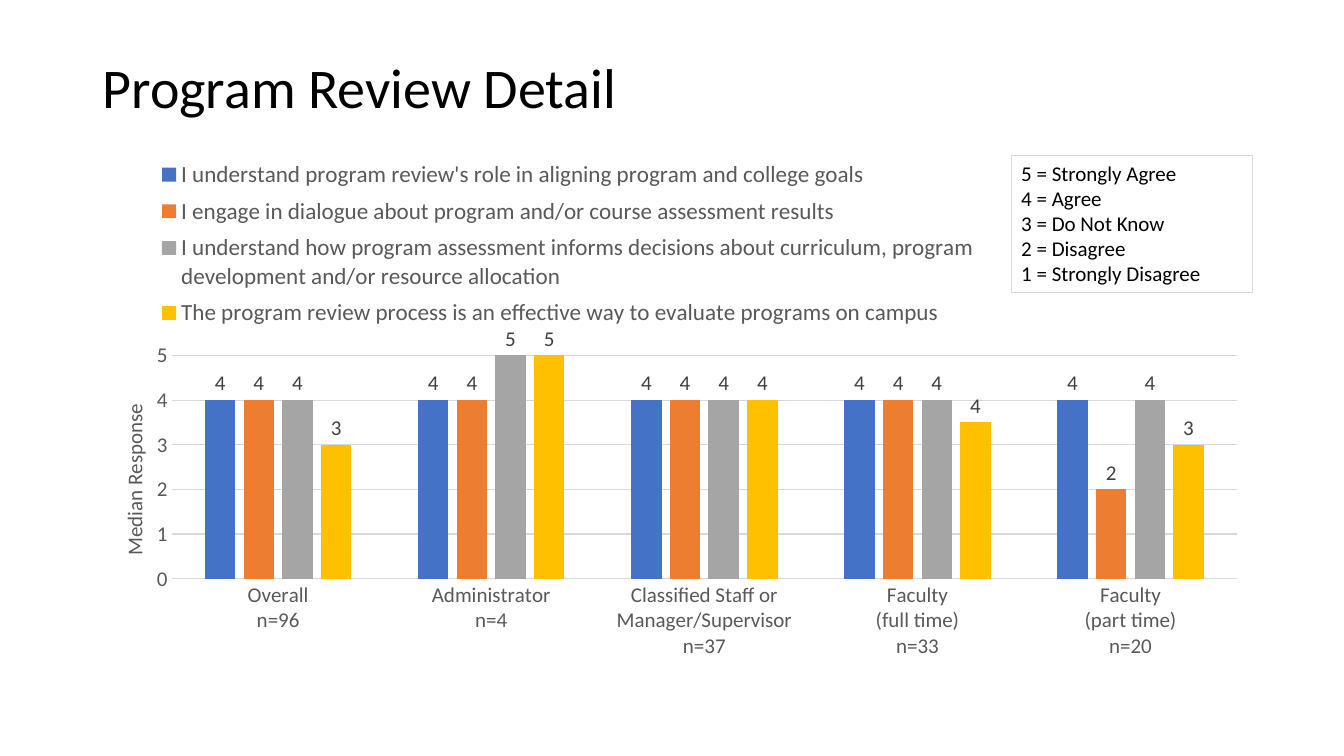
import pptx
import pptx.chart.data
import pptx.dml.color
import pptx.enum.chart
import pptx.enum.shapes
import pptx.enum.text
import pptx.oxml
import pptx.oxml.ns
import pptx.util

Inches, Pt = pptx.util.Inches, pptx.util.Pt

HEADING = "Program Review Detail"
AXIS_TITLE = "Median Response"
GROUPS = [
    "Overall\nn=96",
    "Administrator\nn=4",
    "Classified Staff or\nManager/Supervisor\nn=37",
    "Faculty\n(full time)\nn=33",
    "Faculty\n(part time)\nn=20",
]
STATEMENTS = [
    ("I understand program review's role in aligning program and college goals",
     (4, 4, 4, 4, 4), "blue"),
    ("I engage in dialogue about program and/or course assessment results",
     (4, 4, 4, 4, 2), "orange"),
    ("I understand how program assessment informs decisions about curriculum, "
     "program development and/or resource allocation",
     (4, 5, 4, 4, 4), "gray"),
    ("The program review process is an effective way to evaluate programs on campus",
     (3, 5, 4, 3.5, 3), "gold"),
]
SCALE = ["5 = Strongly Agree", "4 = Agree", "3 = Do Not Know",
         "2 = Disagree", "1 = Strongly Disagree"]

COLORS = {
    "blue": "4472C4", "orange": "ED7D31", "gray": "A5A5A5", "gold": "FFC000",
    "black": "000000", "axis": "595959", "label": "404040", "rule": "D9D9D9",
}
HEADING_AT = (0.92, 0.4, 11.5, 1)
CHART_AT = (0.92, 1.4, 11.5, 5.51)
SCALE_AT = (10.03, 1.54, 2.39, 1.36)

# Fractions of the chart frame: x, y and, where needed, w, h
CHART_LAYOUT = {
    "c:chart/c:plotArea": (0, {"x": 0.068, "y": 0.386, "w": 0.919, "h": 0.402}),
    "c:chart/c:legend": (1, {"x": 0.05, "y": 0.02, "w": 0.72, "h": 0.33}),
    "c:chart/c:plotArea/c:valAx/c:title": (1, {"x": 0.02, "y": 0.466}),
}


def rgb(name):
    return pptx.dml.color.RGBColor.from_string(COLORS[name])


def style_font(font, size, color):
    for attribute, value in {"name": "Calibri", "size": Pt(size), "bold": False}.items():
        setattr(font, attribute, value)
    font.color.rgb = rgb(color)


def style_line(line):
    line.color.rgb = rgb("rule")
    line.width = Pt(0.75)


def write_lines(frame, lines, size):
    frame.word_wrap = True
    for index, line in enumerate(lines):
        paragraph = frame.paragraphs[0] if index == 0 else frame.add_paragraph()
        paragraph.alignment = pptx.enum.text.PP_ALIGN.LEFT
        run = paragraph.add_run()
        run.text = line
        style_font(run.font, size, "black")


def place_in_chart(part, index, fractions):
    """Give a chart part a fixed place, as its child number index."""
    for old in part.xpath("c:layout"):
        part.remove(old)
    target = '<c:layoutTarget val="inner"/>' if index == 0 else ""
    modes = "".join(f'<c:{key}Mode val="edge"/>' for key in "xy")
    values = "".join(f'<c:{key} val="{value}"/>' for key, value in fractions.items())
    part.insert(index, pptx.oxml.parse_xml(
        f'<c:layout {pptx.oxml.ns.nsdecls("c")}><c:manualLayout>'
        f"{target}{modes}{values}</c:manualLayout></c:layout>"))


def add_heading(slide):
    heading = slide.shapes.add_textbox(*map(Inches, HEADING_AT)).text_frame
    write_lines(heading, [HEADING], 40)
    heading.vertical_anchor = pptx.enum.text.MSO_ANCHOR.MIDDLE
    heading.paragraphs[0].line_spacing = 0.9


def add_response_chart(slide):
    data = pptx.chart.data.CategoryChartData(number_format="0")
    data.categories = GROUPS
    for statement, medians, _ in STATEMENTS:
        data.add_series(statement, medians)
    chart = slide.shapes.add_chart(
        pptx.enum.chart.XL_CHART_TYPE.COLUMN_CLUSTERED,
        *map(Inches, CHART_AT), data).chart
    style_font(chart.font, 10, "black")
    chart.has_title = False

    chart.has_legend = True
    chart.legend.position = pptx.enum.chart.XL_LEGEND_POSITION.TOP
    chart.legend.include_in_layout = False
    style_font(chart.legend.font, 16.5, "axis")

    columns = chart.plots[0]
    for attribute, value in {"gap_width": 219, "overlap": -27, "vary_by_categories": False}.items():
        setattr(columns, attribute, value)
    for series, (_, _, color) in zip(columns.series, STATEMENTS):
        series.format.fill.solid()
        series.format.fill.fore_color.rgb = rgb(color)
        labels = series.data_labels
        label_format = {
            "show_value": True, "number_format": "0", "number_format_is_linked": False,
            "position": pptx.enum.chart.XL_LABEL_POSITION.OUTSIDE_END,
        }
        for attribute, value in label_format.items():
            setattr(labels, attribute, value)
        style_font(labels.font, 15, "label")

    groups, medians = chart.category_axis, chart.value_axis
    for axis in (groups, medians):
        axis.major_tick_mark = pptx.enum.chart.XL_TICK_MARK.NONE
        axis.minor_tick_mark = pptx.enum.chart.XL_TICK_MARK.NONE
        style_font(axis.tick_labels.font, 15, "axis")
    style_line(groups.format.line)
    medians.format.line.fill.background()
    for attribute, value in {"minimum_scale": 0, "maximum_scale": 5, "major_unit": 1,
                             "has_major_gridlines": True}.items():
        setattr(medians, attribute, value)
    style_line(medians.major_gridlines.format.line)
    medians.tick_labels.number_format = "0"
    medians.tick_labels.number_format_is_linked = False

    title = medians.axis_title.text_frame
    title.text = AXIS_TITLE
    style_font(title.paragraphs[0].runs[0].font, 15, "axis")
    for body in chart.element.xpath("c:chart/c:plotArea/c:valAx/c:title//a:bodyPr"):
        body.set("rot", "-5400000")
        body.set("vert", "horz")

    for part, (index, fractions) in CHART_LAYOUT.items():
        place_in_chart(chart.element.xpath(part)[0], index, fractions)


def add_scale_key(slide):
    key = slide.shapes.add_shape(
        pptx.enum.shapes.MSO_SHAPE.RECTANGLE, *map(Inches, SCALE_AT))
    key.shadow.inherit = False
    key.fill.background()
    style_line(key.line)
    write_lines(key.text_frame, SCALE, 15)
    key.text_frame.vertical_anchor = pptx.enum.text.MSO_ANCHOR.TOP


def main():
    deck = pptx.Presentation()
    deck.slide_width, deck.slide_height = Inches(13.33), Inches(7.5)
    slide = deck.slides.add_slide(deck.slide_layouts[6])
    add_heading(slide)
    add_response_chart(slide)
    add_scale_key(slide)
    deck.save("out.pptx")


if __name__ == "__main__":
    main()
